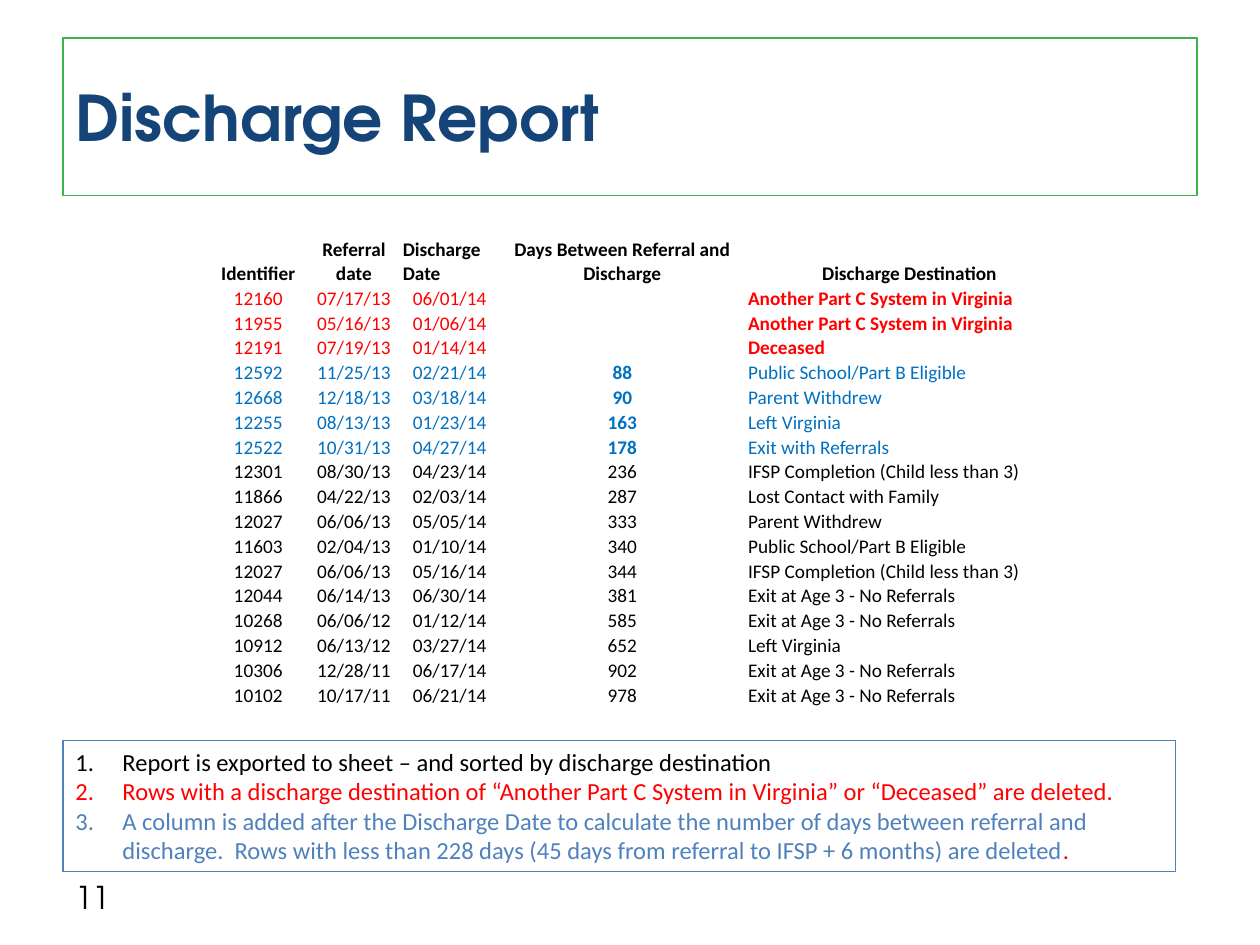
from lxml import etree
from pptx import Presentation
from pptx.dml.color import RGBColor
from pptx.enum import shapes, text
from pptx.oxml.ns import qn
from pptx.util import Cm, Pt

BLACK, RED, BLUE = "000000", "FF0000", "0070C0"
NAVY, GREEN, STEEL = "154578", "39B54A", "4F81BD"
HEADING_FONT, BODY_FONT = "TeX Gyre Adventor", "Calibri"
LEFT = 1.27

HEADERS = ["Identifier", "Referral date", "Discharge Date",
           "Days Between Referral and Discharge", "Discharge Destination"]
COLUMN_WIDTHS = [1.93, 1.93, 1.93, 5.03, 6.55]

# Discharges grouped by what happens to the row: colour, bold columns, rows
DISCHARGES = [
    (RED, {4}, [
        ("12160", "07/17/13", "06/01/14", "", "Another Part C System in Virginia"),
        ("11955", "05/16/13", "01/06/14", "", "Another Part C System in Virginia"),
        ("12191", "07/19/13", "01/14/14", "", "Deceased"),
    ]),
    (BLUE, {3}, [
        ("12592", "11/25/13", "02/21/14", "88", "Public School/Part B Eligible"),
        ("12668", "12/18/13", "03/18/14", "90", "Parent Withdrew"),
        ("12255", "08/13/13", "01/23/14", "163", "Left Virginia"),
        ("12522", "10/31/13", "04/27/14", "178", "Exit with Referrals"),
    ]),
    (BLACK, set(), [
        ("12301", "08/30/13", "04/23/14", "236", "IFSP Completion (Child less than 3)"),
        ("11866", "04/22/13", "02/03/14", "287", "Lost Contact with Family"),
        ("12027", "06/06/13", "05/05/14", "333", "Parent Withdrew"),
        ("11603", "02/04/13", "01/10/14", "340", "Public School/Part B Eligible"),
        ("12027", "06/06/13", "05/16/14", "344", "IFSP Completion (Child less than 3)"),
        ("12044", "06/14/13", "06/30/14", "381", "Exit at Age 3 - No Referrals"),
        ("10268", "06/06/12", "01/12/14", "585", "Exit at Age 3 - No Referrals"),
        ("10912", "06/13/12", "03/27/14", "652", "Left Virginia"),
        ("10306", "12/28/11", "06/17/14", "902", "Exit at Age 3 - No Referrals"),
        ("10102", "10/17/11", "06/21/14", "978", "Exit at Age 3 - No Referrals"),
    ]),
]

# Each step is a list of (wording, colour) parts
STEPS = [
    [("Report is exported to sheet – and sorted by discharge destination", BLACK)],
    [("Rows with a discharge destination of “Another Part C System in Virginia” "
      "or “Deceased” are deleted.", RED)],
    [("A column is added after the Discharge Date to calculate the number of days "
      "between referral and discharge.  Rows with less than 228 days (45 days from "
      "referral to IFSP + 6 months) are deleted", STEEL), (".", RED)],
]


def rgb(hex_colour):
    return RGBColor.from_string(hex_colour)


def set_font(font, name, size, colour, bold=False):
    font.name, font.size, font.bold = name, Pt(size), bold
    font.color.rgb = rgb(colour)


def set_outline(box, colour, width):
    box.line.color.rgb = rgb(colour)
    box.line.width = Pt(width)


def add_title(slide, wording):
    title = slide.shapes.title
    title.left, title.top, title.width, title.height = Cm(LEFT), Cm(0.76), Cm(22.86), Cm(3.18)
    set_outline(title, GREEN, 1)
    title.text_frame.text = wording
    title.text_frame.vertical_anchor = text.MSO_ANCHOR.MIDDLE
    heading = title.text_frame.paragraphs[0]
    heading.alignment = text.PP_ALIGN.LEFT
    set_font(heading.font, HEADING_FONT, 36, NAVY, bold=True)


def add_page_number(slide, number):
    frame = slide.shapes.add_textbox(Cm(LEFT), Cm(17.58), Cm(5.92), Cm(1.02)).text_frame
    frame.word_wrap = True
    frame.vertical_anchor = text.MSO_ANCHOR.MIDDLE
    frame.text = number
    set_font(frame.paragraphs[0].font, HEADING_FONT, 18, BLACK)


def fill_cell(cell, wording, colour, bold, centred):
    cell.fill.background()
    cell.vertical_anchor = text.MSO_ANCHOR.BOTTOM
    cell.margin_left = cell.margin_right = cell.margin_top = Cm(0.02)
    cell.margin_bottom = 0
    cell.text = wording
    entry = cell.text_frame.paragraphs[0]
    entry.alignment = text.PP_ALIGN.CENTER if centred else text.PP_ALIGN.LEFT
    set_font(entry.font, BODY_FONT, 11, colour, bold)


def add_discharge_table(slide):
    records = [(colour, bold_columns, row)
               for colour, bold_columns, rows in DISCHARGES for row in rows]
    header_height, row_height = 0.98, 0.5
    table = slide.shapes.add_table(
        len(records) + 1, len(HEADERS), Cm(4.24), Cm(4.78), Cm(sum(COLUMN_WIDTHS)),
        Cm(header_height + row_height * len(records))).table
    table.horz_banding = table.first_row = False
    for column, width in zip(table.columns, COLUMN_WIDTHS):
        column.width = Cm(width)
    for row in table.rows:
        row.height = Cm(row_height)
    table.rows[0].height = Cm(header_height)

    for c, header in enumerate(HEADERS):
        fill_cell(table.cell(0, c), header, BLACK, True, centred=c != 2)
    for r, (colour, bold_columns, row) in enumerate(records, 1):
        for c, value in enumerate(row):
            fill_cell(table.cell(r, c), value, colour, c in bold_columns, centred=c != 4)


def number_paragraph(paragraph, indent):
    properties = paragraph._p.get_or_add_pPr()
    properties.set("marL", str(Cm(indent)))
    properties.set("indent", str(-Cm(indent)))
    numbering = etree.Element(qn("a:buAutoNum"), type="arabicPeriod")
    properties.insert(0, numbering)


def add_steps(slide):
    box = slide.shapes.add_shape(shapes.MSO_SHAPE.RECTANGLE,
                                 Cm(LEFT), Cm(14.93), Cm(22.43), Cm(2.64))
    box.shadow.inherit = False
    box.fill.background()
    set_outline(box, STEEL, 0.75)
    frame = box.text_frame
    frame.word_wrap = True
    frame.vertical_anchor = text.MSO_ANCHOR.TOP
    for i, parts in enumerate(STEPS):
        step = frame.add_paragraph() if i else frame.paragraphs[0]
        step.alignment = text.PP_ALIGN.LEFT
        number_paragraph(step, 0.95)
        for wording, colour in parts:
            run = step.add_run()
            run.text = wording
            set_font(run.font, BODY_FONT, 14, colour)


def main():
    deck = Presentation()
    deck.slide_width, deck.slide_height = Cm(25.4), Cm(19.05)
    slide = deck.slides.add_slide(deck.slide_layouts[5])
    add_title(slide, "Discharge Report")
    add_page_number(slide, "11")
    add_discharge_table(slide)
    add_steps(slide)
    deck.save("out.pptx")


if __name__ == "__main__":
    main()
